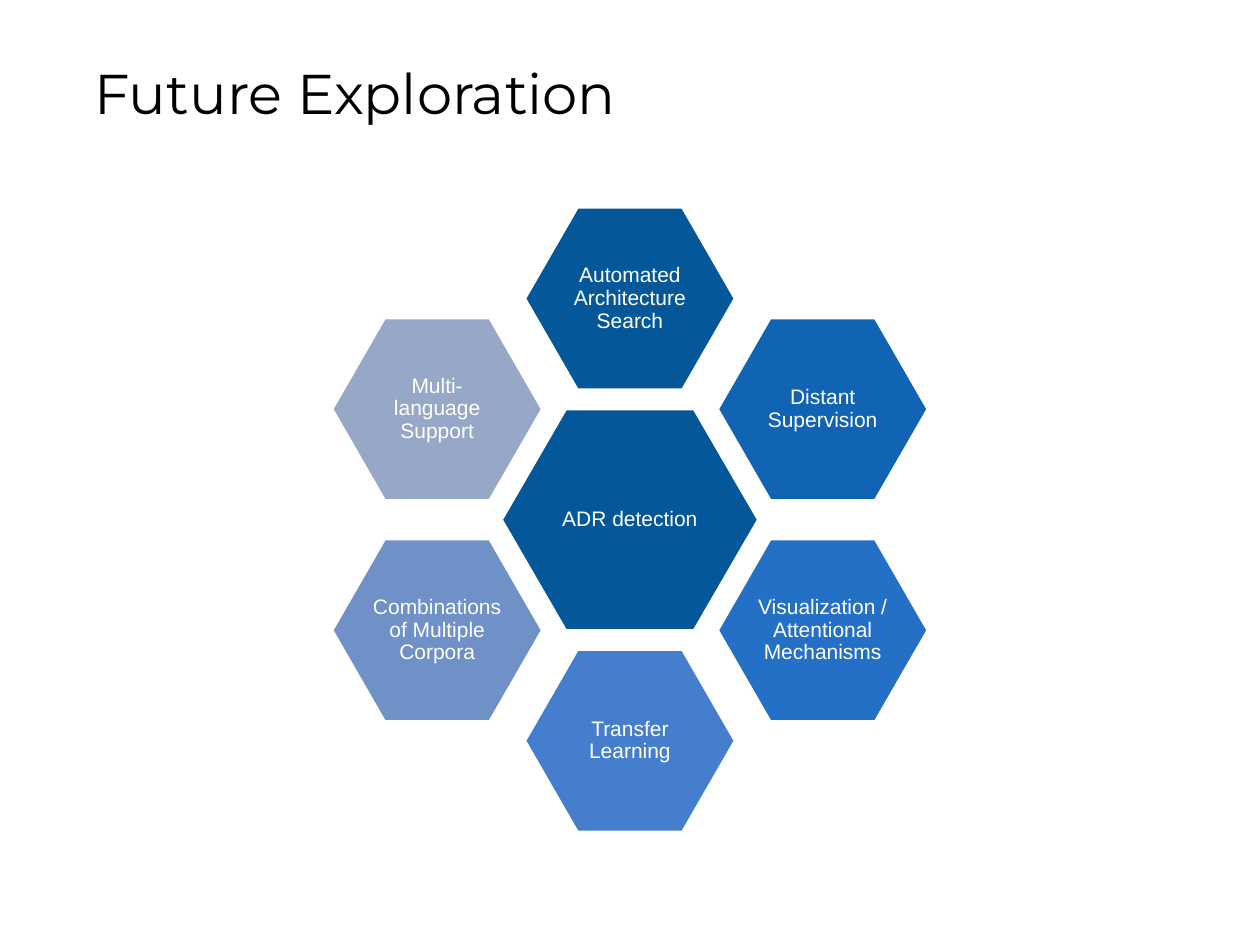
from dataclasses import dataclass

from pptx import Presentation
from pptx.dml.color import RGBColor
from pptx.enum import text
from pptx.shapes.autoshape import Shape
from pptx.shapes.shapetree import SlideShapes
from pptx.util import Inches, Pt

WHITE = RGBColor(0xFF, 0xFF, 0xFF)
BLACK = RGBColor(0x00, 0x00, 0x00)
NAVY = RGBColor(0x04, 0x57, 0x99)
COBALT = RGBColor(0x11, 0x64, 0xB3)
AZURE = RGBColor(0x24, 0x70, 0xC7)
SKY = RGBColor(0x45, 0x7E, 0xCC)
STEEL = RGBColor(0x70, 0x91, 0xC7)
MIST = RGBColor(0x96, 0xA7, 0xC8)

TOP_ROW_Y, BOTTOM_ROW_Y = 2.37, 5.88  # centres of the outermost hexagons
CENTER_X = 5.0
CENTER_Y = (TOP_ROW_Y + BOTTOM_ROW_Y) / 2
RING_X = 1.53  # sideways distance from the centre to the side hexagons
RING_Y = (BOTTOM_ROW_Y - TOP_ROW_Y) / 2
CORNER = 0.25  # share of the width taken by each slanted end


@dataclass(frozen=True)
class HexagonSize:
    width: float
    height: float
    inset_x: float
    inset_y: float


@dataclass(frozen=True)
class Topic:
    label: str
    fill: RGBColor
    column: float = 0
    row: float = 0


HUB_SIZE = HexagonSize(2.03, 1.75, 0.35, 0.31)
TOPIC_SIZE = HexagonSize(1.66, 1.44, 0.29, 0.26)

HUB = Topic("ADR detection", NAVY)
TOPICS = [
    Topic("Automated Architecture Search", NAVY, 0, -1),
    Topic("Distant Supervision", COBALT, 1, -0.5),
    Topic("Visualization / Attentional Mechanisms", AZURE, 1, 0.5),
    Topic("Transfer Learning", SKY, 0, 1),
    Topic("Combinations of Multiple Corpora", STEEL, -1, 0.5),
    Topic("Multi-language Support", MIST, -1, -0.5),
]


def add_hexagon(shapes: SlideShapes, topic: Topic, size: HexagonSize) -> Shape:
    x = CENTER_X + topic.column * RING_X
    y = CENTER_Y + topic.row * RING_Y
    half_width, half_height = size.width / 2, size.height / 2
    half_edge = half_width - CORNER * size.width
    corners = [
        (x - half_width, y),
        (x - half_edge, y - half_height),
        (x + half_edge, y - half_height),
        (x + half_width, y),
        (x + half_edge, y + half_height),
        (x - half_edge, y + half_height),
    ]
    points = [(Inches(left), Inches(top)) for left, top in corners]
    builder = shapes.build_freeform(*points[0])
    builder.add_line_segments(points[1:], close=True)
    hexagon = builder.convert_to_shape()
    hexagon.shadow.inherit = False
    hexagon.fill.solid()
    hexagon.fill.fore_color.rgb = topic.fill
    hexagon.line.color.rgb = WHITE
    hexagon.line.width = Pt(1)

    frame = hexagon.text_frame
    frame.word_wrap = True
    frame.vertical_anchor = text.MSO_ANCHOR.MIDDLE
    frame.margin_left = frame.margin_right = Inches(size.inset_x)
    frame.margin_top = frame.margin_bottom = Inches(size.inset_y)
    paragraph = frame.paragraphs[0]
    paragraph.alignment = text.PP_ALIGN.CENTER
    paragraph.line_spacing = 0.9
    run = paragraph.add_run()
    run.text = topic.label
    run.font.name = "Arial"
    run.font.size = Pt(12)
    run.font.color.rgb = WHITE
    return hexagon


def main() -> None:
    presentation = Presentation()
    presentation.slide_width = Inches(10)
    presentation.slide_height = Inches(7.5)
    slide = presentation.slides.add_slide(presentation.slide_layouts[5])

    title = slide.shapes.title
    title.left, title.top = Inches(0.75), Inches(0.5)
    title.width, title.height = Inches(8.5), Inches(1.05)
    frame = title.text_frame
    frame.vertical_anchor = text.MSO_ANCHOR.TOP
    frame.auto_size = text.MSO_AUTO_SIZE.NONE
    frame.margin_left = frame.margin_right = 0
    frame.margin_top = frame.margin_bottom = 0
    paragraph = frame.paragraphs[0]
    paragraph.alignment = text.PP_ALIGN.LEFT
    paragraph.line_spacing = 0.95
    run = paragraph.add_run()
    run.text = "Future Exploration"
    run.font.name = "Montserrat"
    run.font.size = Pt(32)
    run.font.color.rgb = BLACK

    hexagons = [add_hexagon(slide.shapes, HUB, HUB_SIZE)]
    hexagons += [add_hexagon(slide.shapes, topic, TOPIC_SIZE) for topic in TOPICS]
    slide.shapes.add_group_shape(hexagons)

    presentation.save("out.pptx")


if __name__ == "__main__":
    main()
